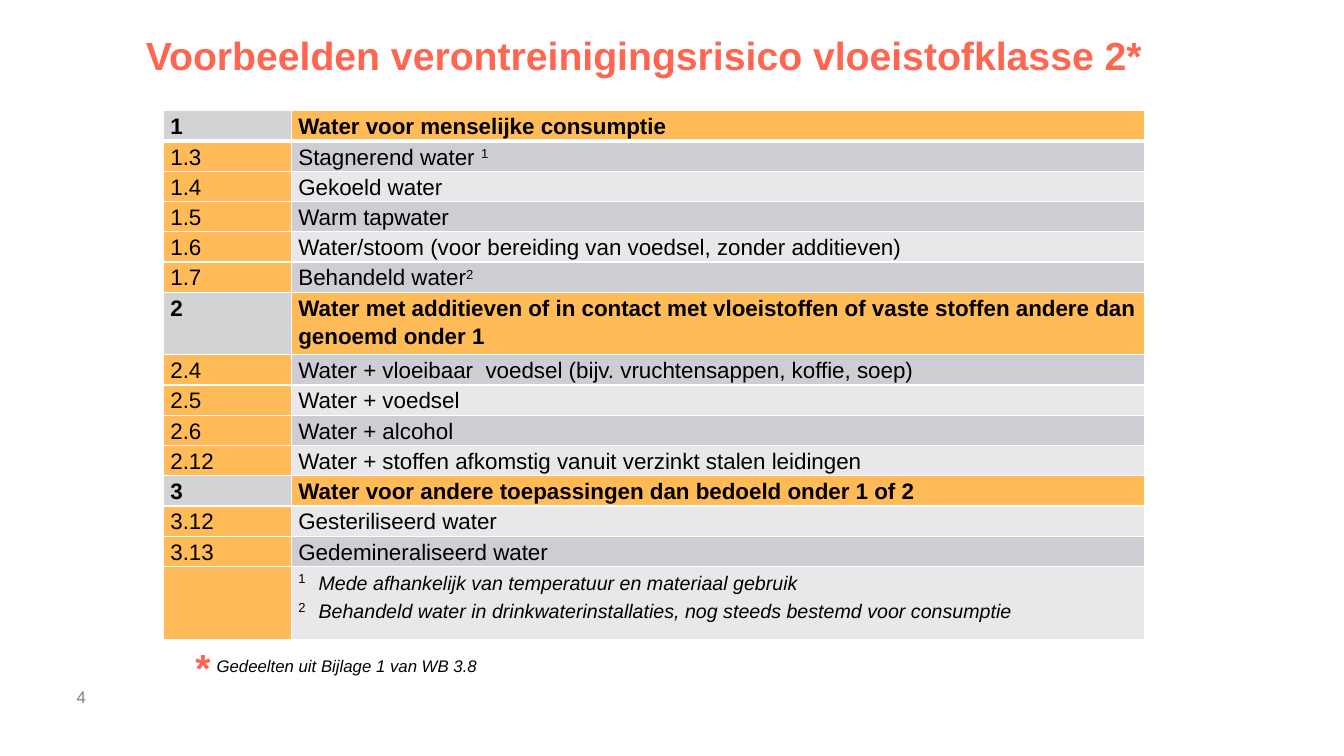
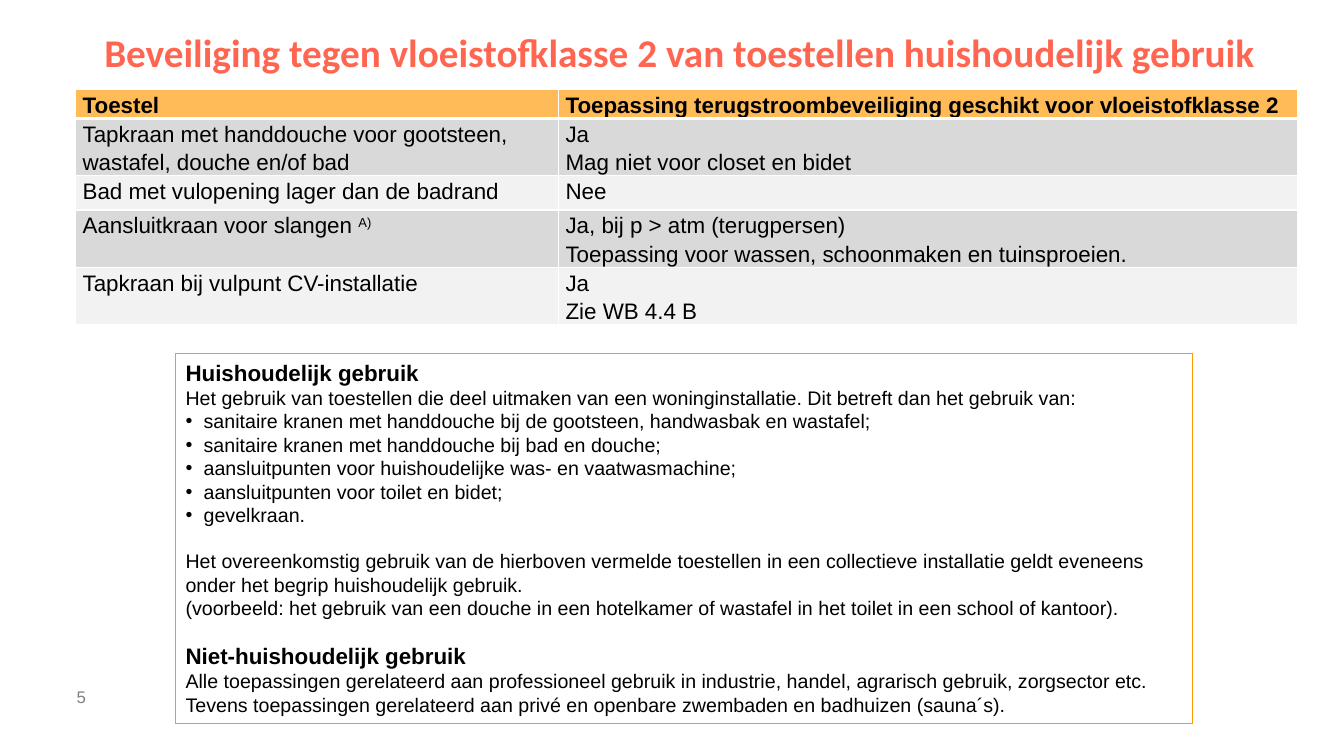
import dataclasses
import typing

import lxml.etree
import pptx
import pptx.dml.color
import pptx.enum.text
import pptx.oxml.ns
import pptx.util

SCALE = 9144
HUES = {
    "title": "FF6651", "gold": "FFBB57", "edge": "FF9900", "text": "000000",
    "page": "808080", "white": "FFFFFF", "index": "D1D3D4",
    "lilac": "CECDD3", "mist": "E8E8EA", "grey": "D9D9D9", "pale": "F2F2F2",
}
FLUSH = {"margin_left": 0, "margin_top": 0, "margin_right": 0, "margin_bottom": 0}
MIDDLE = pptx.enum.text.MSO_ANCHOR.MIDDLE
FIXED = pptx.enum.text.MSO_AUTO_SIZE.NONE
CENTER = pptx.enum.text.PP_ALIGN.CENTER


@dataclasses.dataclass(frozen=True)
class Box:
    left: int
    top: int
    width: int
    height: int


@dataclasses.dataclass(frozen=True)
class Face:
    size: int
    bold: bool = False
    italic: bool = False
    hue: str = "text"
    name: str = "Arial"


@dataclasses.dataclass(frozen=True)
class Line:
    text: str
    face: Face
    hang: int = 0
    dot: bool = False
    gap: int = 0


@dataclasses.dataclass(frozen=True)
class Cell:
    lines: list[Line]
    fill: str


PLAIN = Face(16)
BOLD = Face(16, bold=True)
SMALL = Face(14)
NOTE = Face(14, italic=True)
STAR = Face(28, bold=True, hue="title")
PAGE = Face(12, hue="page")

RISKS = [
    ("1", "Water voor menselijke consumptie"),
    ("1.3", "Stagnerend water ^1"),
    ("1.4", "Gekoeld water"),
    ("1.5", "Warm tapwater"),
    ("1.6", "Water/stoom (voor bereiding van voedsel, zonder additieven)"),
    ("1.7", "Behandeld water^2"),
    ("2", "Water met additieven of in contact met vloeistoffen of vaste stoffen "
          "andere dan genoemd onder 1"),
    ("2.4", "Water + vloeibaar  voedsel (bijv. vruchtensappen, koffie, soep)"),
    ("2.5", "Water + voedsel"),
    ("2.6", "Water + alcohol"),
    ("2.12", "Water + stoffen afkomstig vanuit verzinkt stalen leidingen"),
    ("3", "Water voor andere toepassingen dan bedoeld onder 1 of 2"),
    ("3.12", "Gesteriliseerd water"),
    ("3.13", "Gedemineraliseerd water"),
]
NOTES = [
    "^1^\tMede afhankelijk van temperatuur en materiaal gebruik",
    "^2^\tBehandeld water in drinkwaterinstallaties, nog steeds bestemd voor consumptie",
]
TAPS = [
    ("Toestel", ["Toepassing terugstroombeveiliging geschikt voor vloeistofklasse 2"]),
    ("Tapkraan met handdouche voor gootsteen, wastafel, douche en/of bad",
     ["Ja", "Mag niet voor closet en bidet"]),
    ("Bad met vulopening lager dan de badrand", ["Nee"]),
    ("Aansluitkraan voor slangen ^A)",
     ["Ja, bij p > atm (terugpersen)",
      "Toepassing voor wassen, schoonmaken en tuinsproeien."]),
    ("Tapkraan bij vulpunt CV-installatie", ["Ja", "Zie WB 4.4 B"]),
]
USES = [
    "sanitaire kranen met handdouche bij de gootsteen, handwasbak en wastafel;",
    "sanitaire kranen met handdouche bij bad en douche;",
    "aansluitpunten voor huishoudelijke was- en vaatwasmachine;",
    "aansluitpunten voor toilet en bidet;",
    "gevelkraan.",
]
SCOPE = [
    Line("Huishoudelijk gebruik", BOLD),
    Line("Het gebruik van toestellen die deel uitmaken van een woninginstallatie. "
         "Dit betreft dan het gebruik van:", SMALL),
    *[Line(use, SMALL, hang=18, dot=True) for use in USES],
    Line("Het overeenkomstig gebruik van de hierboven vermelde toestellen in een "
         "collectieve installatie geldt eveneens onder het begrip huishoudelijk gebruik.",
         SMALL, gap=16),
    Line("(voorbeeld: het gebruik van een douche in een hotelkamer of wastafel in het "
         "toilet in een school of kantoor).", SMALL),
    Line("Niet-huishoudelijk gebruik", BOLD, gap=16),
    Line("Alle toepassingen gerelateerd aan professioneel gebruik in industrie, handel, "
         "agrarisch gebruik, zorgsector etc. Tevens toepassingen gerelateerd aan privé en "
         "openbare zwembaden en badhuizen (sauna´s).", SMALL),
]


def px(size: int) -> int:
    return size * SCALE


def tint(hue: str) -> pptx.dml.color.RGBColor:
    return pptx.dml.color.RGBColor.from_string(HUES[hue])


def apply(item: typing.Any, form: dict[str, typing.Any]) -> None:
    for key, value in form.items():
        setattr(item, key, value)


def node(base: typing.Any, tag: str, **attrs: str) -> typing.Any:
    return lxml.etree.SubElement(base, pptx.oxml.ns.qn(tag), attrs)


def place(shape: typing.Any, box: Box) -> None:
    apply(shape, {key: px(value) for key, value in dataclasses.asdict(box).items()})


def write(frame: typing.Any, lines: list[Line], form: dict[str, typing.Any]) -> None:
    for rank, line in enumerate(lines):
        para = frame.add_paragraph() if rank else frame.paragraphs[0]
        props = para._p.get_or_add_pPr()
        props.set("marL", str(px(line.hang)))
        props.set("indent", str(-px(line.hang)))
        if line.dot:
            node(props, "a:buChar", char="•")
        else:
            node(props, "a:buNone")
        apply(para, {"space_before": pptx.util.Pt(line.gap), **form})
        face = line.face
        for turn, part in enumerate(line.text.split("^")):
            if not part:
                continue
            run = para.add_run()
            run.text = part
            raised = turn % 2 == 1
            apply(run.font, {
                "name": face.name,
                "size": pptx.util.Pt(16 if raised else face.size),
                "bold": face.bold,
                "italic": face.italic and not raised,
            })
            run.font.color.rgb = tint(face.hue)
            if raised:
                run._r.get_or_add_rPr().set("baseline", "30000")


def label(slide: typing.Any, box: Box, line: Line, form: dict[str, typing.Any]) -> None:
    frame = slide.shapes.add_textbox(*map(px, dataclasses.astuple(box))).text_frame
    apply(frame, form)
    write(frame, [line], {})


def start(deck: typing.Any, layout: int, title: str, box: Box, font: str, page: int) -> typing.Any:
    slide = deck.slides.add_slide(deck.slide_layouts[layout])
    head = slide.shapes.title
    place(head, box)
    form = {**FLUSH, "vertical_anchor": MIDDLE, "word_wrap": True, "auto_size": FIXED}
    apply(head.text_frame, form)
    face = Face(28, bold=True, hue="title", name=font)
    write(head.text_frame, [Line(title, face)], {"alignment": CENTER, "line_spacing": 0.9})
    label(slide, Box(76, 671, 71, 40), Line(str(page), PAGE), form)
    return slide


def border(cell: typing.Any, row: int) -> None:
    props = cell._tc.get_or_add_tcPr()
    sides = {"L": 1, "R": 1, "T": 3 if row == 1 else 1, "B": 3 if row == 0 else 1}
    for side, width in sides.items():
        edge = node(props, f"a:ln{side}", w=str(pptx.util.Pt(width)))
        node(node(edge, "a:solidFill"), "a:srgbClr", val=HUES["white"])


def grid(slide: typing.Any, left: int, top: int, cols: list[int], rows: list[int],
         cells: list[list[Cell]]) -> None:
    box = Box(left, top, sum(cols), sum(rows))
    table = slide.shapes.add_table(
        len(rows), len(cols), *map(px, dataclasses.astuple(box))).table
    apply(table, {"first_row": False, "horz_banding": False})
    for col, width in zip(table.columns, cols):
        col.width = px(width)
    for rank, (row, height) in enumerate(zip(table.rows, rows)):
        row.height = px(height)
        for cell, data in zip(row.cells, cells[rank]):
            apply(cell, {**FLUSH, "margin_left": px(7), "margin_right": px(7)})
            border(cell, rank)
            cell.fill.solid()
            cell.fill.fore_color.rgb = tint(data.fill)
            write(cell.text_frame, data.lines, {"line_spacing": 1.15})


def risks(deck: typing.Any) -> None:
    slide = start(deck, 5, "Voorbeelden verontreinigingsrisico vloeistofklasse 2* ",
                  Box(55, 30, 1178, 54), "Arial", 4)
    cells = []
    for rank, (code, text) in enumerate(RISKS):
        head = code.isdigit()
        face = BOLD if head else PLAIN
        band = "lilac" if rank % 2 else "mist"
        cells.append([Cell([Line(code, face)], "index" if head else "gold"),
                      Cell([Line(text, face)], "gold" if head else band)])
    cells.append([Cell([], "gold"),
                  Cell([Line(text, NOTE, hang=20) for text in NOTES], "mist")])
    rows = [62 if code == "2" else 30 for code, _ in RISKS] + [73]
    grid(slide, 162, 110, [127, 846], rows, cells)
    form = {"word_wrap": False}
    label(slide, Box(184, 633, 35, 57), Line("*", STAR), form)
    label(slide, Box(205, 646, 285, 30),
          Line("Gedeelten uit Bijlage 1 van WB 3.8", Face(12, italic=True)), form)


def taps(deck: typing.Any) -> None:
    slide = start(deck, 1,
                  "Beveiliging tegen vloeistofklasse 2 van toestellen huishoudelijk gebruik",
                  Box(44, 27, 1259, 54), "Calibri", 5)
    cells = []
    for rank, (tap, texts) in enumerate(TAPS):
        face = PLAIN if rank else BOLD
        fill = ("grey" if rank % 2 else "pale") if rank else "gold"
        cells.append([Cell([Line(text, face) for text in part], fill)
                      for part in ([tap], texts)])
    grid(slide, 75, 89, [479, 733], [28, 57, 34, 57, 57], cells)
    body = slide.placeholders[1]
    place(body, Box(174, 351, 1009, 367))
    body.line.color.rgb = tint("edge")
    body.line.width = pptx.util.Pt(1)
    apply(body.text_frame, {"word_wrap": True, "auto_size": FIXED})
    write(body.text_frame, SCOPE, {})


def main() -> None:
    deck = pptx.Presentation()
    apply(deck, {"slide_width": px(1333), "slide_height": px(750)})
    risks(deck)
    taps(deck)
    deck.save("out.pptx")


if __name__ == "__main__":
    main()
